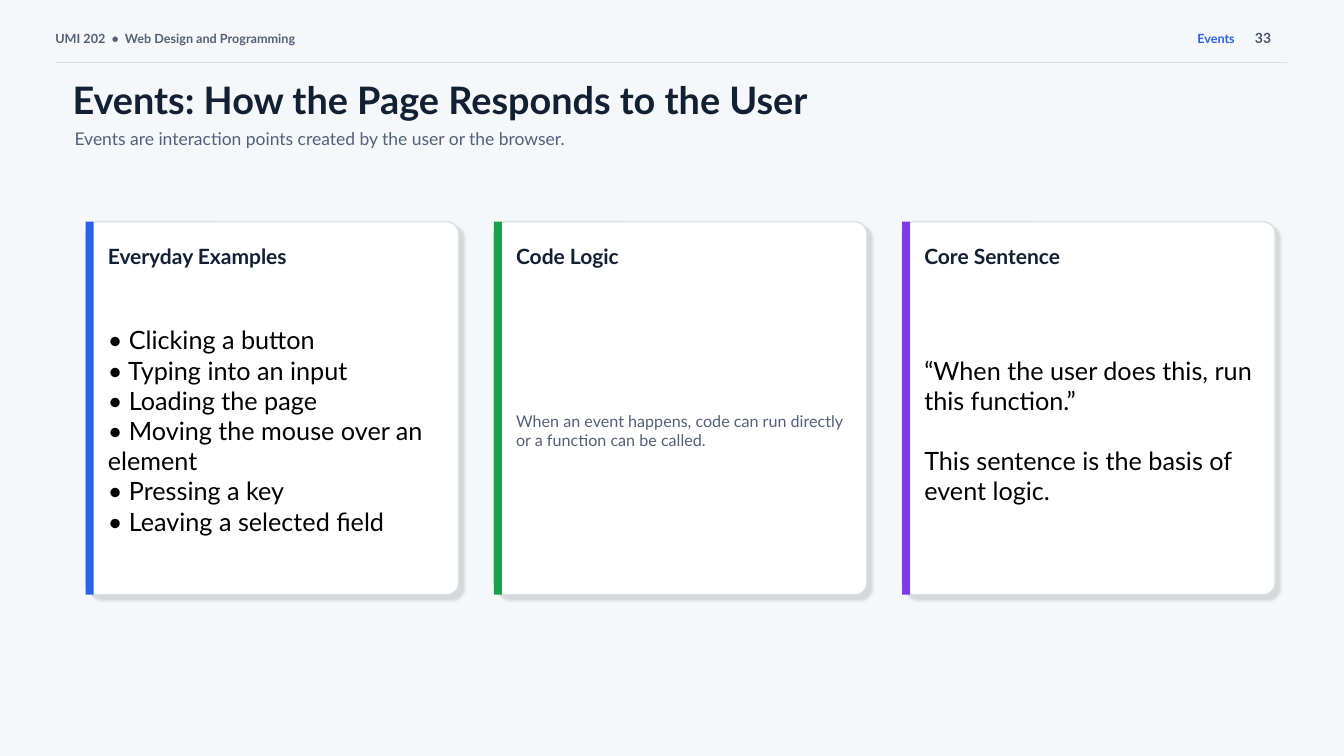
from lxml import etree
from pptx import Presentation
from pptx.dml.color import RGBColor
from pptx.enum import shapes, text
from pptx.oxml import parse_xml
from pptx.oxml.ns import qn
from pptx.util import Pt

BACKGROUND = RGBColor(0xF5, 0xF7, 0xFB)
WHITE = RGBColor(0xFF, 0xFF, 0xFF)
BLACK = RGBColor(0x00, 0x00, 0x00)
NAVY = RGBColor(0x12, 0x20, 0x33)
MUTED = RGBColor(0x52, 0x60, 0x79)
SLATE = RGBColor(0x47, 0x55, 0x69)
RULE = RGBColor(0xD7, 0xDE, 0xE9)
CARD_BORDER = RGBColor(0xD8, 0xE0, 0xEA)
BLUE = RGBColor(0x25, 0x63, 0xEB)
GREEN = RGBColor(0x16, 0xA3, 0x4A)
PURPLE = RGBColor(0x7C, 0x3A, 0xED)

CARD_SHADOW = """
<a:effectLst xmlns:a="http://schemas.openxmlformats.org/drawingml/2006/main">
  <a:outerShdw blurRad="25400" dist="50800" dir="2700000" algn="tl" rotWithShape="0">
    <a:srgbClr val="000000"><a:alpha val="12000"/></a:srgbClr>
  </a:outerShdw>
</a:effectLst>"""

CARD_LEFT, CARD_TOP, CARD_SIZE, CARD_STEP = 61.2, 158.4, 266.4, 291.6
BAR_WIDTH = 5.76
TEXT_INSET, TEXT_WIDTH = 15.84, 240.48

CARDS = [
    ("Everyday Examples", BLUE, 18, BLACK, 0,
     ["• Clicking a button", "• Typing into an input", "• Loading the page",
      "• Moving the mouse over an element", "• Pressing a key",
      "• Leaving a selected field"]),
    ("Code Logic", GREEN, 11.5, MUTED, 0,
     ["When an event happens, code can run directly or a function can be called."]),
    ("Core Sentence", PURPLE, 18, BLACK, 21.6,
     ["“When the user does this, run this function.”",
      "This sentence is the basis of event logic."]),
]


class SlideBuilder:
    def __init__(self, slide, font):
        self.slide = slide
        self.font = font

    def background(self, color):
        fill = self.slide.background.fill
        fill.solid()
        fill.fore_color.rgb = color

    def text(self, left, top, width, height, lines, size, color, bold=False,
             align=text.PP_ALIGN.LEFT, gap=0):
        """Add a text box with one paragraph per line, gap points apart."""
        sp = self.slide.shapes.add_textbox(Pt(left), Pt(top), Pt(width), Pt(height))
        tf = sp.text_frame
        tf.word_wrap = True
        tf.vertical_anchor = text.MSO_ANCHOR.MIDDLE
        tf.margin_left = tf.margin_right = tf.margin_top = tf.margin_bottom = 0
        tf.text = "\n".join(lines)
        for i, p in enumerate(tf.paragraphs):
            p.alignment = align
            if i and gap:
                p.space_before = Pt(gap)
            for r in p.runs:
                r.font.name = self.font
                r.font.size = Pt(size)
                r.font.bold = bold
                r.font.color.rgb = color

    def rule(self, x1, y1, x2, y2, color):
        line = self.slide.shapes.add_connector(
            shapes.MSO_CONNECTOR.STRAIGHT, Pt(x1), Pt(y1), Pt(x2), Pt(y2))
        line.line.color.rgb = color
        line.line.width = Pt(1)
        etree.SubElement(line._element.spPr, qn("a:effectLst"))

    def shape(self, kind, left, top, width, height, fill, border=None):
        sp = self.slide.shapes.add_shape(kind, Pt(left), Pt(top), Pt(width), Pt(height))
        sp.shadow.inherit = False
        sp.fill.solid()
        sp.fill.fore_color.rgb = fill
        if border is None:
            sp.line.fill.background()
        else:
            sp.line.color.rgb = border
            sp.line.width = Pt(1)
        return sp

    def card(self, left, heading, accent, size, color, gap, lines):
        sp = self.shape(shapes.MSO_SHAPE.ROUNDED_RECTANGLE, left, CARD_TOP,
                        CARD_SIZE, CARD_SIZE, WHITE, CARD_BORDER)
        sp.adjustments[0] = 0.032
        spPr = sp._element.spPr
        spPr.replace(spPr.find(qn("a:effectLst")), parse_xml(CARD_SHADOW))
        self.shape(shapes.MSO_SHAPE.RECTANGLE, left, CARD_TOP,
                   BAR_WIDTH, CARD_SIZE, accent)
        x = left + TEXT_INSET
        self.text(x, CARD_TOP + 12.96, TEXT_WIDTH, 23.04, [heading], 15, NAVY, bold=True)
        self.text(x, CARD_TOP + 41.76, TEXT_WIDTH, 214.56, lines, size, color, gap=gap)


def main():
    prs = Presentation()
    prs.slide_width, prs.slide_height = Pt(960), Pt(540)
    s = SlideBuilder(prs.slides.add_slide(prs.slide_layouts[6]), "Lato")
    s.background(BACKGROUND)

    s.text(39.6, 18.72, 468, 18, ["UMI 202  •  Web Design and Programming"],
           9, MUTED, bold=True)
    s.text(723.6, 18.72, 158.4, 18, ["Events"], 9, BLUE, bold=True,
           align=text.PP_ALIGN.RIGHT)
    s.rule(39.6, 44.64, 919.44, 44.64, RULE)
    s.text(896.4, 18, 23.04, 18, ["33"], 10, SLATE, bold=True)

    s.text(51.84, 59.04, 532.8, 24.48, ["Events: How the Page Responds to the User"],
           27, NAVY, bold=True)
    s.text(53.28, 92.16, 633.6, 12.96,
           ["Events are interaction points created by the user or the browser."],
           12.5, MUTED)

    for i, card in enumerate(CARDS):
        s.card(CARD_LEFT + i * CARD_STEP, *card)

    prs.save("out.pptx")


if __name__ == "__main__":
    main()
